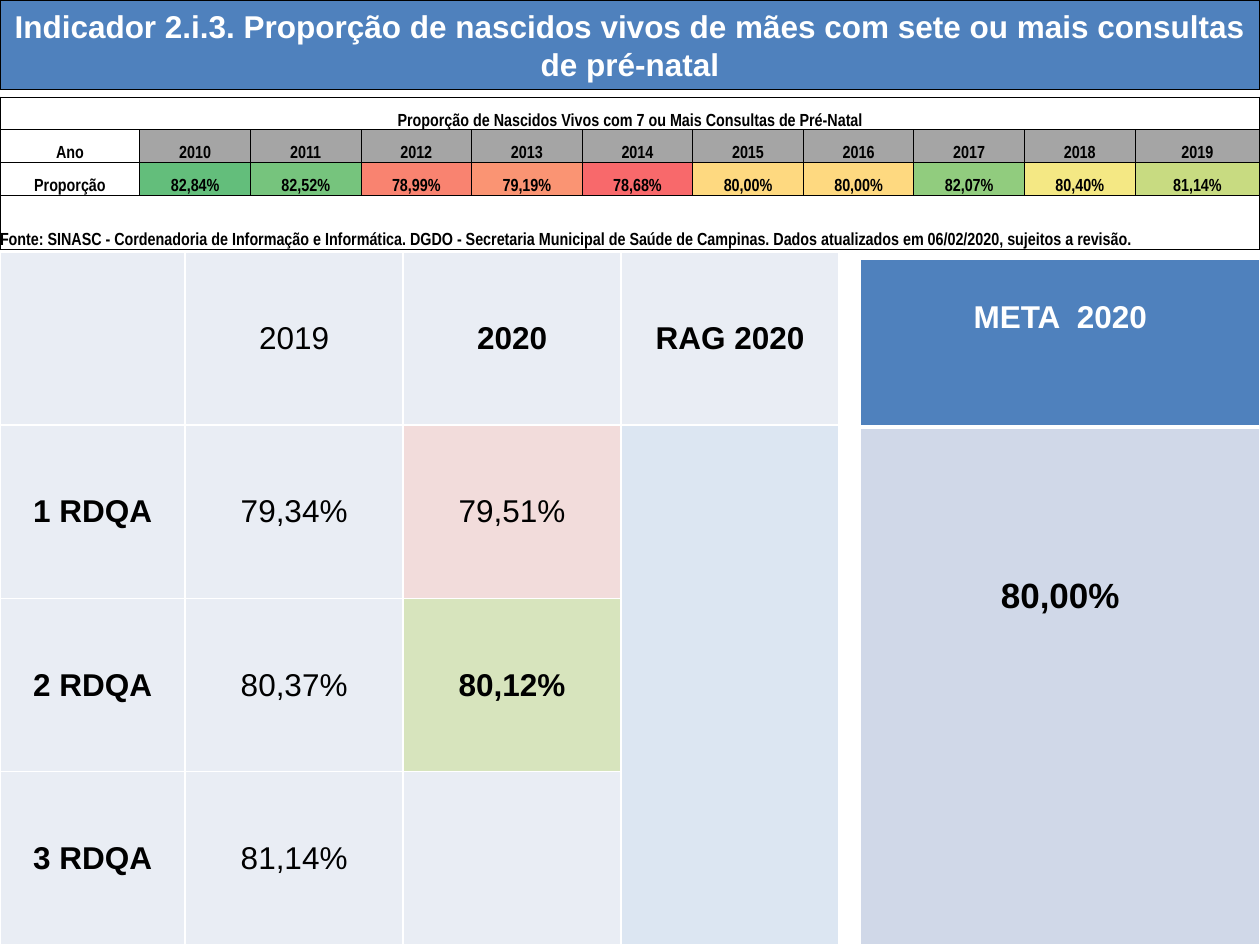
from lxml import etree
from pptx import Presentation
from pptx.dml.color import RGBColor
from pptx.enum.shapes import MSO_SHAPE
from pptx.enum.text import MSO_ANCHOR, PP_ALIGN
from pptx.oxml.ns import qn
from pptx.util import Inches, Pt

RECT = MSO_SHAPE.RECTANGLE
TOP, MIDDLE, BOTTOM = MSO_ANCHOR.TOP, MSO_ANCHOR.MIDDLE, MSO_ANCHOR.BOTTOM
LEFT, CENTER = PP_ALIGN.LEFT, PP_ALIGN.CENTER

BLACK = RGBColor(0x00, 0x00, 0x00)
WHITE = RGBColor(0xFF, 0xFF, 0xFF)
BLUE = RGBColor(0x4F, 0x81, 0xBD)
GRAY = RGBColor(0xA5, 0xA5, 0xA5)
PALE = RGBColor(0xE9, 0xED, 0xF4)
PALE_BLUE = RGBColor(0xDC, 0xE6, 0xF2)
PINK = RGBColor(0xF2, 0xDC, 0xDB)
LIGHT_GREEN = RGBColor(0xD7, 0xE4, 0xBD)
META_FILL = RGBColor(0xD0, 0xD8, 0xE8)

# Year, proportion and colour-scale fill
HISTORY = [
    ("2010", "82,84%", RGBColor(0x63, 0xBE, 0x7B)),
    ("2011", "82,52%", RGBColor(0x76, 0xC4, 0x7D)),
    ("2012", "78,99%", RGBColor(0xF9, 0x83, 0x70)),
    ("2013", "79,19%", RGBColor(0xFA, 0x94, 0x73)),
    ("2014", "78,68%", RGBColor(0xF8, 0x69, 0x6B)),
    ("2015", "80,00%", RGBColor(0xFE, 0xD9, 0x80)),
    ("2016", "80,00%", RGBColor(0xFE, 0xD9, 0x80)),
    ("2017", "82,07%", RGBColor(0x91, 0xCC, 0x7E)),
    ("2018", "80,40%", RGBColor(0xF4, 0xE8, 0x84)),
    ("2019", "81,14%", RGBColor(0xC8, 0xDB, 0x81)),
]

# Text and bold flag of each cell
QUARTERS = [
    [("", False), ("2019", False), ("2020", True), ("RAG 2020", True)],
    [("1 RDQA", True), ("79,34%", False), ("79,51%", False), ("", False)],
    [("2 RDQA", True), ("80,37%", False), ("80,12%", True), ("", False)],
    [("3 RDQA", True), ("81,14%", False), ("", False), ("", False)],
]
QUARTER_FILLS = {(1, 2): PINK, (2, 2): LIGHT_GREEN, (1, 3): PALE_BLUE}


def write_text(tf, text, size=18, font="Arial", color=BLACK, bold=False, align=CENTER):
    p = tf.paragraphs[0]
    p.alignment = align
    if not text:
        etree.SubElement(p._p, qn("a:endParaRPr"), sz=str(size * 100))
        return
    r = p.add_run()
    r.text = text
    r.font.name = font
    r.font.size = Pt(size)
    r.font.bold = bold
    r.font.color.rgb = color


def set_borders(cell, color, width, bottom=None):
    tc_pr = cell._tc.get_or_add_tcPr()
    for i, side in enumerate("LRTB"):
        points = bottom if side == "B" and bottom else width
        ln = etree.Element(qn(f"a:ln{side}"), w=str(Pt(points)))
        fill = etree.SubElement(ln, qn("a:solidFill"))
        etree.SubElement(fill, qn("a:srgbClr"), val=str(color))
        tc_pr.insert(i, ln)


class Deck:
    def __init__(self):
        self.prs = Presentation()
        self.prs.slide_width = Inches(10)
        self.prs.slide_height = Inches(7.5)
        self.slide = self.prs.slides.add_slide(self.prs.slide_layouts[6])

    def banner(self, text, x, y, w, h):
        sp = self.slide.shapes.add_shape(RECT, Inches(x), Inches(y), Inches(w), Inches(h))
        sp.shadow.inherit = False
        sp.fill.solid()
        sp.fill.fore_color.rgb = BLUE
        sp.line.color.rgb = BLACK
        sp.line.width = Pt(0.75)
        sp.text_frame.word_wrap = True
        write_text(sp.text_frame, text, color=WHITE, bold=True)

    def table(self, x, y, cols, rows):
        frame = self.slide.shapes.add_table(
            len(rows), len(cols), Inches(x), Inches(y), Inches(sum(cols)), Inches(sum(rows)))
        table = frame.table
        table.first_row = table.horz_banding = False
        for column, width in zip(table.columns, cols):
            column.width = Inches(width)
        for row, height in zip(table.rows, rows):
            row.height = Inches(height)
        return table

    def cell(self, cell, text, fill=None, anchor=MIDDLE, top=0, border=(WHITE, 1), **style):
        cell.margin_left = cell.margin_right = cell.margin_bottom = 0
        cell.margin_top = Inches(top)
        cell.vertical_anchor = anchor
        if fill is None:
            cell.fill.background()
        else:
            cell.fill.solid()
            cell.fill.fore_color.rgb = fill
        set_borders(cell, *border)
        write_text(cell.text_frame, text, **style)


def main():
    deck = Deck()

    # Title
    deck.banner("Indicador 2.i.3. Proporção de nascidos vivos de mães com sete ou mais "
                "consultas de pré-natal", 0, 0, 10, 0.71)

    # Quarterly results
    quarters = deck.table(0, 2, [1.47] + [1.73] * 3, [1.375] * 4)
    for i, row in enumerate(QUARTERS):
        for j, (text, bold) in enumerate(row):
            deck.cell(quarters.cell(i, j), text, QUARTER_FILLS.get((i, j), PALE), bold=bold)
    quarters.cell(1, 3).merge(quarters.cell(3, 3))

    # Target
    target = deck.table(6.83, 2.06, [3.17], [1.33, 4.11])
    deck.cell(target.cell(0, 0), "META  2020", BLUE, TOP, 0.32, (WHITE, 1, 3),
              color=WHITE, bold=True)
    deck.cell(target.cell(1, 0), "80,00%", META_FILL, TOP, 1.19, size=20, bold=True)

    # Yearly history
    first, last = 1.11, 0.99
    year_width = (10 - first - last) / (len(HISTORY) - 1)
    history = deck.table(0, 0.77, [first] + [year_width] * (len(HISTORY) - 1) + [last],
                         [0.26, 0.26, 0.26, 0.43])
    blanks = [("", None)] * len(HISTORY)
    rows = [
        [("Proporção de Nascidos Vivos com 7 ou Mais Consultas de Pré-Natal", None)] + blanks,
        [("Ano", None)] + [(year, GRAY) for year, _, _ in HISTORY],
        [("Proporção", None)] + [(value, fill) for _, value, fill in HISTORY],
        [("Fonte: SINASC - Cordenadoria de Informação e Informática. DGDO - Secretaria "
          "Municipal de Saúde de Campinas. Dados atualizados em 06/02/2020, sujeitos a "
          "revisão.", None)] + blanks,
    ]
    for i, row in enumerate(rows):
        for j, (text, fill) in enumerate(row):
            deck.cell(history.cell(i, j), text, fill, BOTTOM, border=(BLACK, 0.5), size=10,
                      font="Arial Narrow", bold=True, align=LEFT if i == 3 else CENTER)
    for i in (0, 3):
        history.cell(i, 0).merge(history.cell(i, len(HISTORY)))

    deck.prs.save("out.pptx")


if __name__ == "__main__":
    main()
